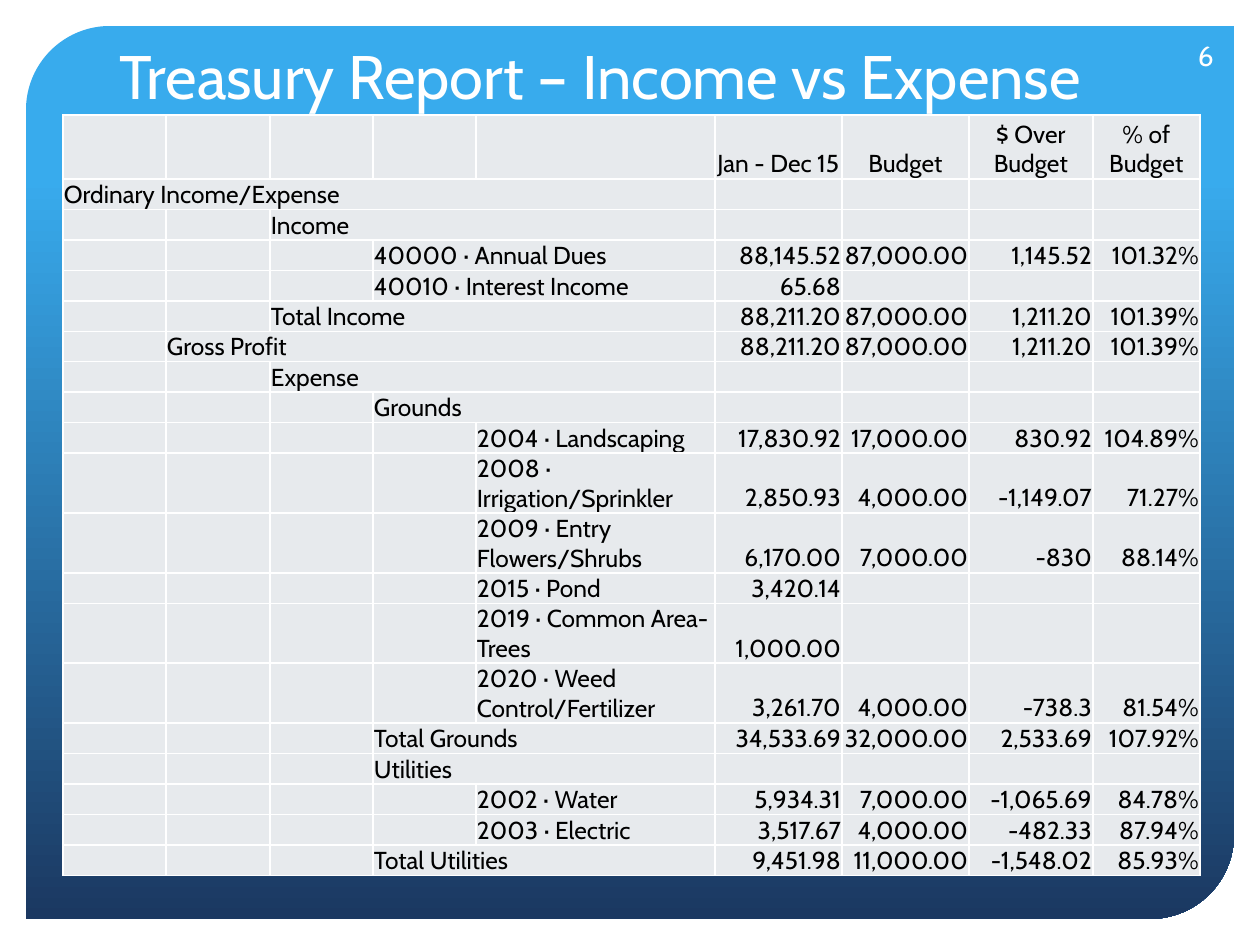
"""Builds the treasury report slide with its income and expense table."""
import pptx
import pptx.dml.color
import pptx.enum.shapes
import pptx.enum.text
import pptx.oxml
import pptx.oxml.ns
import pptx.util

PX = 914400 / 126
FONT = "Cabin"
COLORS = {"white": "FFFFFF", "black": "000000", "sky": "38ABED", "navy": "1B3861", "cell": "E7EAED"}
ALIGN = pptx.enum.text.PP_ALIGN
ANCHOR = pptx.enum.text.MSO_ANCHOR


def px(count):
    return pptx.util.Emu(round(count * PX))


def write(frame, text, size=14, color="black", align=ALIGN.LEFT):
    para = frame.paragraphs[0]
    para.alignment = align
    if not text:
        para._p.get_or_add_endParaRPr().set("sz", str(size * 100))
        return
    run = para.add_run()
    run.text = text
    run.font.name = FONT
    run.font.size = pptx.util.Pt(size)
    run.font.color.rgb = pptx.dml.color.RGBColor.from_string(COLORS[color])


deck = pptx.Presentation()
deck.slide_width, deck.slide_height = px(1260), px(945)
slide = deck.slides.add_slide(deck.slide_layouts[5])
shapes = slide.shapes

panel = shapes.add_shape(
    pptx.enum.shapes.MSO_SHAPE.ROUND_2_DIAG_RECTANGLE, px(26), px(26), px(1208), px(893))
panel.adjustments[0], panel.adjustments[1] = 0.094, 0
panel.shadow.inherit = False
panel.line.fill.background()
panel.fill.gradient()
panel.fill.gradient_angle = 270
for stop, (place, color) in zip(panel.fill.gradient_stops, [(0.17, "sky"), (1, "navy")]):
    stop.position = place
    stop.color.rgb = pptx.dml.color.RGBColor.from_string(COLORS[color])
shapes._spTree.insert(2, panel._element)

number = shapes.add_textbox(px(1158), px(30), px(68), px(50)).text_frame
number.word_wrap = True
number.vertical_anchor = ANCHOR.MIDDLE
write(number, "6", size=16, color="white", align=ALIGN.RIGHT)

title = shapes.title
title.left, title.top, title.width, title.height = px(107), px(32), px(1045), px(144)
title.text_frame.auto_size = pptx.enum.text.MSO_AUTO_SIZE.NONE
title.text_frame.vertical_anchor = ANCHOR.TOP
write(title.text_frame, "Treasury Report – Income vs Expense", size=35.1, color="white")

LABELS = 5
HEADS = ["Jan - Dec 15", "Budget", "$ Over Budget", "% of Budget"]
LINES = [
    (0, "Ordinary Income/Expense", []),
    (2, "Income", []),
    (3, "40000 · Annual Dues", ["88,145.52", "87,000.00", "1,145.52", "101.32%"]),
    (3, "40010 · Interest Income", ["65.68"]),
    (2, "Total Income", ["88,211.20", "87,000.00", "1,211.20", "101.39%"]),
    (1, "Gross Profit", ["88,211.20", "87,000.00", "1,211.20", "101.39%"]),
    (2, "Expense", []),
    (3, "Grounds", []),
    (4, "2004 · Landscaping", ["17,830.92", "17,000.00", "830.92", "104.89%"]),
    (4, "2008 · Irrigation/Sprinkler", ["2,850.93", "4,000.00", "-1,149.07", "71.27%"]),
    (4, "2009 · Entry Flowers/Shrubs", ["6,170.00", "7,000.00", "-830", "88.14%"]),
    (4, "2015 · Pond", ["3,420.14"]),
    (4, "2019 · Common Area-Trees", ["1,000.00"]),
    (4, "2020 · Weed Control/Fertilizer", ["3,261.70", "4,000.00", "-738.3", "81.54%"]),
    (3, "Total Grounds", ["34,533.69", "32,000.00", "2,533.69", "107.92%"]),
    (3, "Utilities", []),
    (4, "2002 · Water", ["5,934.31", "7,000.00", "-1,065.69", "84.78%"]),
    (4, "2003 · Electric", ["3,517.67", "4,000.00", "-482.33", "87.94%"]),
    (3, "Total Utilities", ["9,451.98", "11,000.00", "-1,548.02", "85.93%"]),
]
WIDTHS = [103, 104, 103, 103, 239, 127, 127, 124, 107]
TALL = {10, 11, 13, 14}
heights = [64] + [59 if row in TALL else 30 for row in range(1, len(LINES) + 1)]

table = shapes.add_table(
    len(heights), len(WIDTHS), px(63), px(115), px(sum(WIDTHS)), px(sum(heights))).table
table.first_row = table.horz_banding = False
for column, width in zip(table.columns, WIDTHS):
    column.width = px(width)
for row, height in zip(table.rows, heights):
    row.height = px(height)

grid = [[""] * LABELS + HEADS]
for depth, label, values in LINES:
    texts = [""] * len(WIDTHS)
    texts[depth] = label
    texts[LABELS:LABELS + len(values)] = values
    grid.append(texts)

for r, texts in enumerate(grid):
    for c, text in enumerate(texts):
        cell = table.cell(r, c)
        cell.margin_left = cell.margin_right = cell.margin_top = px(1)
        cell.margin_bottom = 0
        cell.vertical_anchor = ANCHOR.BOTTOM
        for side in ("lnL", "lnR", "lnT", "lnB"):
            cell._tc.get_or_add_tcPr().append(pptx.oxml.parse_xml(
                f'<a:{side} {pptx.oxml.ns.nsdecls("a")} w="12700"><a:solidFill>'
                f'<a:srgbClr val="{COLORS["white"]}"/></a:solidFill></a:{side}>'))
        cell.fill.solid()
        cell.fill.fore_color.rgb = pptx.dml.color.RGBColor.from_string(COLORS["cell"])
        align = ALIGN.LEFT if c < LABELS else ALIGN.RIGHT if r else ALIGN.CENTER
        write(cell.text_frame, text, align=align)

for r, (depth, label, values) in enumerate(LINES, 1):
    if depth < LABELS - 1:
        table.cell(r, depth).merge(table.cell(r, LABELS - 1))

deck.save("out.pptx")
